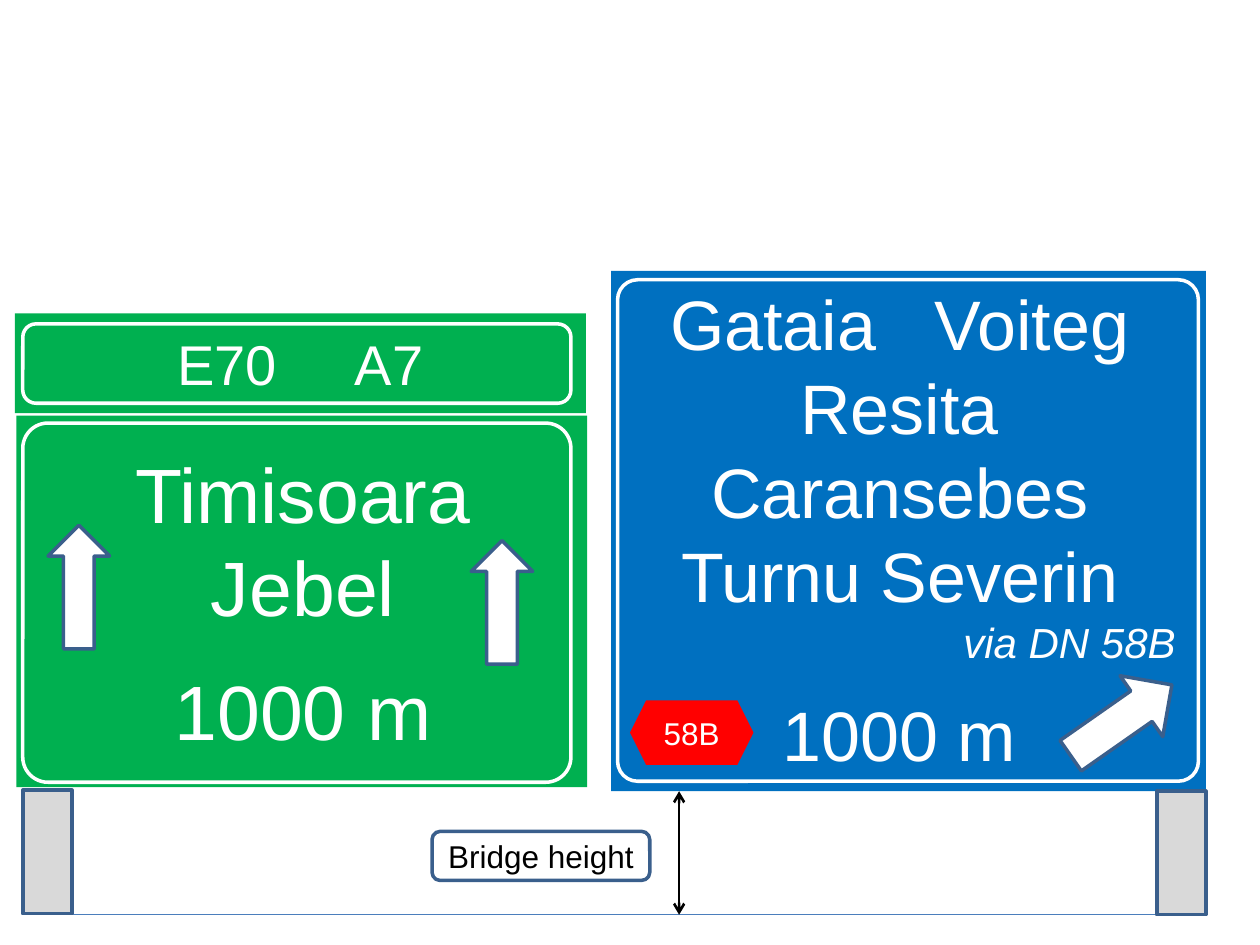
from dataclasses import dataclass

from lxml.etree import SubElement
from pptx import Presentation
from pptx.dml.color import RGBColor
from pptx.enum.shapes import MSO_CONNECTOR, MSO_SHAPE
from pptx.enum.text import MSO_ANCHOR, PP_ALIGN
from pptx.oxml.ns import qn
from pptx.util import Cm, Pt

GREEN, BLUE, RED = "00B050", "0070C0", "FF0000"
WHITE, BLACK, GREY = "FFFFFF", "000000", "D9D9D9"
OUTLINE, GROUND = "3A5F8C", "4B7EBC"


def color(hex_code):
    return RGBColor.from_string(hex_code)


@dataclass
class Line:
    """A line of sign text; gap is the extra width in points of its first space."""
    text: str
    size: float
    gap: float = 0
    before: float = 0
    italic: bool = False
    align: PP_ALIGN = PP_ALIGN.CENTER


@dataclass
class SignPainter:
    slide: object
    font: str = "Arial"
    line_width: float = 2

    def shape(self, kind, box, fill=None, line=None, rotation=0, corner=None):
        shape = self.slide.shapes.add_shape(kind, *map(Cm, box))
        shape.shadow.inherit = False
        shape.rotation = rotation
        if corner is not None:
            shape.adjustments[0] = corner
        if fill:
            shape.fill.solid()
            shape.fill.fore_color.rgb = color(fill)
        else:
            shape.fill.background()
        if line:
            shape.line.color.rgb = color(line)
            shape.line.width = Pt(self.line_width)
        else:
            shape.line.fill.background()
        return shape

    def text(self, shape, lines, ink=WHITE, anchor=MSO_ANCHOR.MIDDLE,
             insets=(0.25, 0.13, 0.25, 0.13)):
        frame = shape.text_frame
        frame.word_wrap = True
        frame.vertical_anchor = anchor
        (frame.margin_left, frame.margin_top,
         frame.margin_right, frame.margin_bottom) = map(Cm, insets)
        for index, line in enumerate(lines):
            paragraph = frame.add_paragraph() if index else frame.paragraphs[0]
            paragraph.alignment = line.align
            paragraph.space_before = Pt(line.before)
            parts = line.text.partition(" ") if line.gap else [line.text]
            for part in parts:
                run = paragraph.add_run()
                run.text = part
                run.font.name = self.font
                run.font.size = Pt(line.size)
                run.font.italic = line.italic
                run.font.color.rgb = color(ink)
                if part == " ":
                    run.font._element.set("spc", str(round(line.gap * 100)))

    def frame(self, box, corner=None):
        self.shape(MSO_SHAPE.ROUNDED_RECTANGLE, box, line=WHITE, corner=corner)

    def post(self, left, top):
        self.shape(MSO_SHAPE.RECTANGLE, (left, top, 0.99, 2.49), GREY, OUTLINE)

    def connector(self, start, end, ink, width, arrows=False):
        connector = self.slide.shapes.add_connector(
            MSO_CONNECTOR.STRAIGHT, *map(Cm, start + end))
        connector.line.color.rgb = color(ink)
        connector.line.width = Pt(width)
        if arrows:
            outline = connector.line._get_or_add_ln()
            for tip in ("a:headEnd", "a:tailEnd"):
                SubElement(outline, qn(tip), type="arrow")
        SubElement(connector._element.spPr, qn("a:effectLst"))


def draw_signs(painter):
    towns = painter.shape(MSO_SHAPE.RECTANGLE, (0.33, 8.38, 11.51, 7.49), GREEN)
    painter.text(towns, [Line("Timisoara", 44), Line("Jebel", 44),
                         Line("1000 m", 44, before=18.4)],
                 insets=(0.3, 0.13, 0.25, 0.13))
    route = painter.shape(MSO_SHAPE.RECTANGLE, (0.3, 6.32, 11.51, 2.01), GREEN)
    painter.text(route, [Line("E70 A7", 32, gap=35.6)])
    for left, top in ((0.97, 10.59), (9.5, 10.9)):
        painter.shape(MSO_SHAPE.UP_ARROW, (left, top, 1.24, 2.49), WHITE, OUTLINE)

    exit_sign = painter.shape(MSO_SHAPE.RECTANGLE, (12.32, 5.46, 11.99, 10.49), BLUE)
    painter.text(exit_sign, [
        Line("Gataia Voiteg", 40, gap=22.2),
        Line("Resita", 40),
        Line("Caransebes", 40),
        Line("Turnu Severin", 40),
        Line("via DN 58B", 24, italic=True, align=PP_ALIGN.RIGHT),
        Line("1000 m", 40, before=13.8),
    ], anchor=MSO_ANCHOR.TOP, insets=(0.25, 0.2, 0.61, 0.13))
    painter.shape(MSO_SHAPE.RIGHT_ARROW, (21.36, 13.77, 2.49, 1.5),
                  WHITE, OUTLINE, rotation=325)

    painter.frame((0.46, 6.53, 11.05, 1.6))
    painter.frame((0.46, 8.53, 11.05, 7.24), corner=0.07)
    painter.frame((12.45, 5.64, 11.71, 10.11), corner=0.04)
    road = painter.shape(MSO_SHAPE.HEXAGON, (12.7, 14.12, 2.49, 1.3), RED)
    painter.text(road, [Line("58B", 18)])


def draw_bridge(painter):
    painter.connector((1.3, 18.44), (23.32, 18.44), GROUND, 0.75)
    painter.post(0.46, 15.93)
    painter.post(23.32, 15.95)
    painter.connector((13.69, 15.95), (13.69, 18.44), BLACK, 1.5, arrows=True)
    height_label = painter.shape(MSO_SHAPE.ROUNDED_RECTANGLE,
                                 (8.71, 16.76, 4.39, 0.99), WHITE, OUTLINE)
    painter.text(height_label, [Line("Bridge height", 18)], ink=BLACK)


def main():
    presentation = Presentation()
    presentation.slide_width, presentation.slide_height = Cm(25.4), Cm(19.05)
    blank_layout = presentation.slide_layouts[6]
    painter = SignPainter(presentation.slides.add_slide(blank_layout))
    draw_signs(painter)
    draw_bridge(painter)
    presentation.save("out.pptx")


if __name__ == "__main__":
    main()
